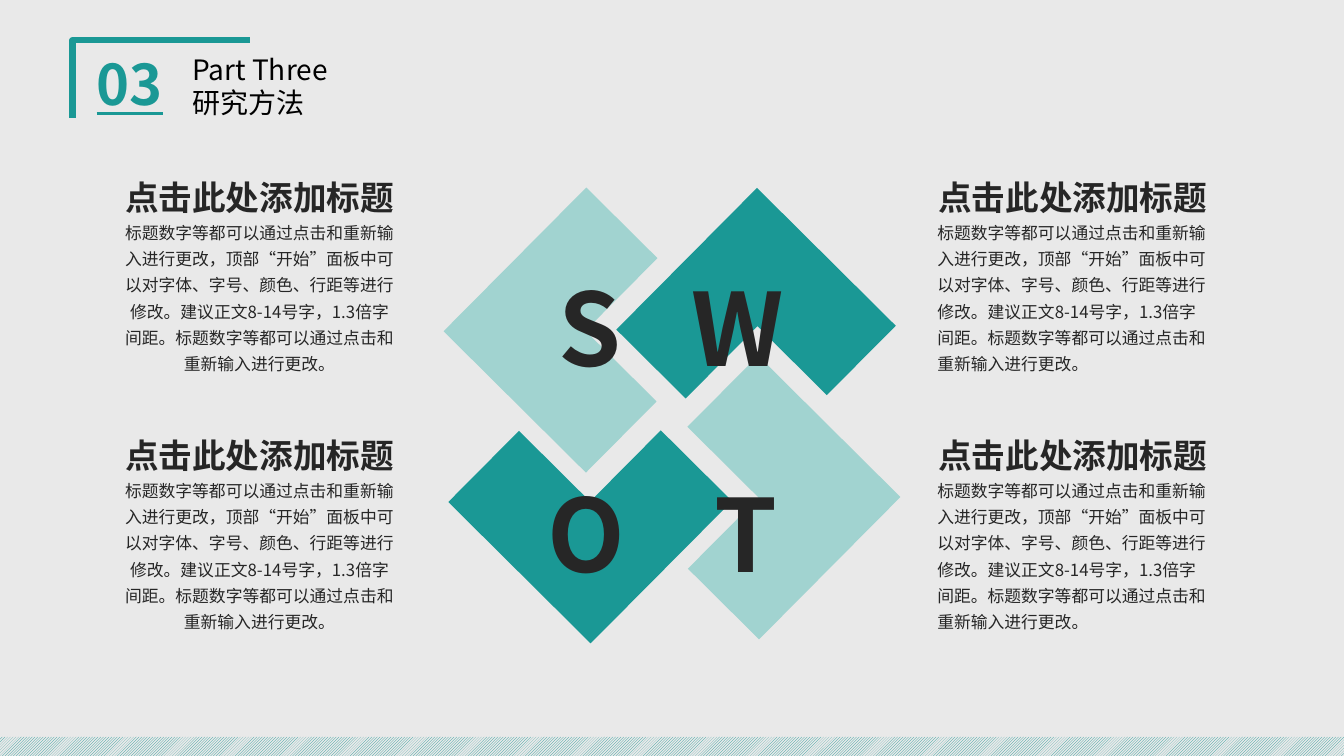
from lxml.etree import SubElement
from pptx import Presentation
from pptx.dml.color import RGBColor
from pptx.enum.dml import MSO_PATTERN
from pptx.enum.shapes import MSO_SHAPE
from pptx.enum.text import MSO_AUTO_SIZE, PP_ALIGN
from pptx.oxml.ns import qn
from pptx.util import Pt

FONT = "Noto Sans CJK SC"
TEAL, PALE, INK, PAPER = "1A9895", "A1D3D0", "262626", "E9E9E9"

SECTION_NUMBER = "03"
SECTION_TITLE = ["Part Three", "研究方法"]
HEADING = "点击此处添加标题"
BODY = (
    "标题数字等都可以通过点击和重新输入进行更改，顶部“开始”面板中可以对字体、字号、颜色、行距等进行修改。"
    "建议正文8-14号字，1.3倍字间距。标题数字等都可以通过点击和重新输入进行更改。"
)
CORNERS = [
    (PALE, 347, 163.4, 143.3, 144.7),
    (TEAL, 468.7, 164.2, 142.6, 139.7),
    (PALE, 470.2, 283.7, 143.3, 143.3),
    (TEAL, 349.9, 286.6, 143.3, 143.3),
]
LETTERS = [
    ("S", 391.7, 186.5, 58.3),
    ("O", 383.8, 333.4, 74.2),
    ("T", 503.3, 333.4, 59.8),
    ("W", 486.7, 186.5, 92.9),
]
COLUMNS = [(662.4, PP_ALIGN.LEFT), (80.6, PP_ALIGN.CENTER)]
ROWS = [123.1, 307.4]


def colour(hex_string):
    return RGBColor.from_string(hex_string)


def add_text(lines, left, top, width, height, size, color=INK, bold=False,
             underline=False, wrap=True, align=PP_ALIGN.LEFT, spacing=None):
    box = slide.shapes.add_textbox(Pt(left), Pt(top), Pt(width), Pt(height))
    frame = box.text_frame
    frame.word_wrap = wrap
    frame.auto_size = MSO_AUTO_SIZE.SHAPE_TO_FIT_TEXT
    for i, line in enumerate(lines):
        paragraph = frame.add_paragraph() if i else frame.paragraphs[0]
        paragraph.alignment = align
        paragraph.line_spacing = spacing
        run = paragraph.add_run()
        run.text = line
        font = run.font
        font.size = Pt(size)
        font.bold = bold
        font.underline = underline
        font.color.rgb = colour(color)
        font.name = FONT
        SubElement(run._r.get_or_add_rPr(), qn("a:ea"), typeface=FONT)


prs = Presentation()
prs.slide_width, prs.slide_height = Pt(960), Pt(540)
slide = prs.slides.add_slide(prs.slide_layouts[6])
slide.background.fill.solid()
slide.background.fill.fore_color.rgb = colour(PAPER)

outline = slide.shapes.build_freeform(Pt(51.8), Pt(84.2))
outline.add_line_segments([(Pt(51.8), Pt(28.8)), (Pt(178.6), Pt(28.8))], close=False)
bracket = outline.convert_to_shape()
bracket.shadow.inherit = False
bracket.fill.background()
bracket.line.color.rgb = colour(TEAL)
bracket.line.width = Pt(4.5)

strip = slide.shapes.add_shape(MSO_SHAPE.RECTANGLE, Pt(-2), Pt(526.3), Pt(962), Pt(15.8))
strip.shadow.inherit = False
strip.fill.patterned()
strip.fill.pattern = MSO_PATTERN.LIGHT_UPWARD_DIAGONAL
strip.fill.fore_color.rgb = colour(TEAL)
strip.fill.back_color.rgb = colour(PAPER)
strip.line.fill.background()

add_text([SECTION_NUMBER], 61.9, 31.7, 68.4, 55.4, 40, color=TEAL, bold=True, underline=True)
add_text(SECTION_TITLE, 130.3, 33.8, 172.8, 55.4, 20, color="000000")

for turn, (fill, left, top, width, height) in enumerate(CORNERS):
    corner = slide.shapes.add_shape(MSO_SHAPE.CORNER, Pt(left), Pt(top), Pt(width), Pt(height))
    corner.rotation = 44.8 + 90 * turn
    corner.shadow.inherit = False
    corner.fill.solid()
    corner.fill.fore_color.rgb = colour(fill)
    corner.line.fill.background()

for letter, left, top, width in LETTERS:
    add_text([letter], left, top, width, 94.3, 72, bold=True, wrap=False)

for left, align in COLUMNS:
    for top in ROWS:
        add_text([HEADING], left + 0.7, top, 208.1, 36, 24, bold=True, wrap=False, align=align)
        add_text([BODY], left, top + 28.1, 209.5, 121, 12, align=align, spacing=1.3)

prs.save("out.pptx")
